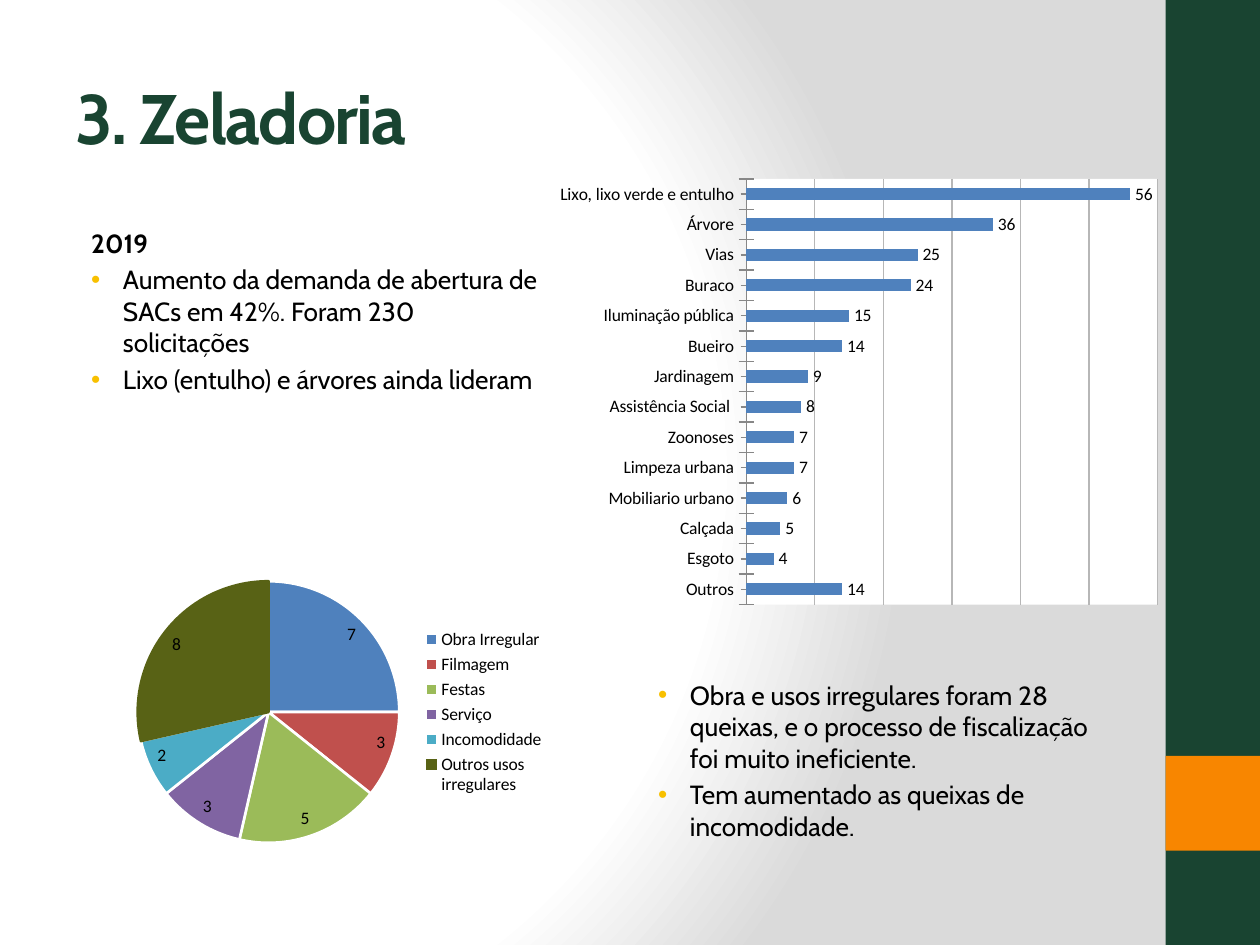
from lxml.etree import SubElement
from pptx import Presentation
from pptx.chart.data import CategoryChartData
from pptx.dml.color import RGBColor
from pptx.enum.chart import XL_CHART_TYPE, XL_LABEL_POSITION, XL_LEGEND_POSITION, XL_TICK_LABEL_POSITION, XL_TICK_MARK
from pptx.enum.shapes import MSO_SHAPE
from pptx.enum.text import MSO_ANCHOR
from pptx.oxml import parse_xml
from pptx.oxml.ns import nsdecls, qn
from pptx.util import Cm, Pt

GREEN, ORANGE, YELLOW = "194431", "F88600", "F8C000"
BLACK, WHITE, BLUE = "000000", "FFFFFF", "4F81BD"
GRID, AXIS = "B7B7B7", "878787"

BACKGROUND = [(0, WHITE), (75, WHITE), (100, "DADADA")]
BANDS = [(0, 19.05, GREEN), (15.24, 1.91, ORANGE)]
TITLE = "3. Zeladoria"
YEAR = "2019"
DEMAND = [
    "Aumento da demanda de abertura de SACs em 42%. Foram 230 solicitações",
    "Lixo (entulho) e árvores ainda lideram",
]
IRREGULAR = [
    "Obra e usos irregulares foram 28 queixas, e o processo de fiscalização foi muito ineficiente.",
    "Tem aumentado as queixas de incomodidade.",
]
REQUESTS = [
    ("Lixo, lixo verde e entulho", 56), ("Árvore", 36), ("Vias", 25), ("Buraco", 24),
    ("Iluminação pública", 15), ("Bueiro", 14), ("Jardinagem", 9),
    ("Assistência Social ", 8), ("Zoonoses", 7), ("Limpeza urbana", 7),
    ("Mobiliario urbano", 6), ("Calçada", 5), ("Esgoto", 4), ("Outros", 14),
]
USES = [
    ("Obra Irregular", 7), ("Filmagem", 3), ("Festas", 5),
    ("Serviço", 3), ("Incomodidade", 2), ("Outros usos irregulares", 8),
]
USE_COLORS = [BLUE, "C0504D", "9BBB59", "8064A2", "4BACC6", "586215"]


def color(value):
    return RGBColor.from_string(value)


def paint(target, value):
    target.fill.solid()
    target.fill.fore_color.rgb = color(value)


def draw_background(page):
    stops = "".join(
        f'<a:gs pos="{place * 1000}"><a:srgbClr val="{value}"/></a:gs>' for place, value in BACKGROUND)
    page.background.fill.solid()
    properties = page.background.fill._xPr
    properties.replace(properties.find(qn("a:solidFill")), parse_xml(
        f'<a:gradFill {nsdecls("a")} rotWithShape="1"><a:gsLst>{stops}</a:gsLst><a:path path="circle">'
        '<a:fillToRect l="20000" t="50000" r="100000" b="50000"/></a:path></a:gradFill>'))


def add_band(page, top, height, value):
    band = page.shapes.add_shape(MSO_SHAPE.RECTANGLE, Cm(23.5), Cm(top), Cm(1.9), Cm(height))
    band.shadow.inherit = False
    paint(band, value)
    band.line.fill.background()


def add_box(page, place, anchor=MSO_ANCHOR.TOP):
    frame = page.shapes.add_textbox(*map(Cm, place)).text_frame
    frame.word_wrap = True
    frame.vertical_anchor = anchor
    return frame


def add_text(frame, text, size=15, value=BLACK, bold=False, left=0, bullet=False, spacing=None):
    first = not frame.paragraphs[0].runs
    para = frame.paragraphs[0] if first else frame.add_paragraph()
    if not first:
        para.space_before = Pt(3)
    properties = para._p.get_or_add_pPr()
    properties.set("marL", str(Cm(left)))
    if bullet:
        properties.set("indent", str(-Cm(0.64)))
        bullet_color = SubElement(properties, qn("a:buClr"))
        SubElement(bullet_color, qn("a:srgbClr"), val=YELLOW)
        SubElement(properties, qn("a:buFont"), typeface="Arial")
        SubElement(properties, qn("a:buChar"), char="•")
    span = para.add_run()
    span.text = text
    span.font.name = "Cabin"
    span.font.size = Pt(size)
    span.font.bold = bold
    span.font.color.rgb = color(value)
    if spacing:
        span._r.get_or_add_rPr().set("spc", str(spacing))


def add_bullets(frame, texts):
    for text in texts:
        add_text(frame, text, left=0.96, bullet=True)


def set_layout(parent, x, y, width, height, inner=True):
    for old in parent.findall(qn("c:layout")):
        parent.remove(old)
    target = '<c:layoutTarget val="inner"/>' if inner else ""
    layout = parse_xml(
        f'<c:layout {nsdecls("c")}><c:manualLayout>{target}<c:xMode val="edge"/><c:yMode val="edge"/>'
        f'<c:x val="{x}"/><c:y val="{y}"/><c:w val="{width}"/><c:h val="{height}"/>'
        '</c:manualLayout></c:layout>')
    parent.insert(0 if inner else 1, layout)


def add_chart(page, kind, rows, place, layout, label_position):
    data = CategoryChartData()
    data.categories = [name for name, _ in rows]
    data.add_series("Series 1", [count for _, count in rows])
    chart = page.shapes.add_chart(kind, *map(Cm, place), data).chart
    chart.has_title = False
    chart.has_legend = False
    chart.font.name = "Calibri"
    chart.font.size = Pt(10)
    chart.font.color.rgb = color(BLACK)
    plot = chart.plots[0]
    plot.vary_by_categories = kind == XL_CHART_TYPE.PIE
    plot.has_data_labels = True
    plot.data_labels.show_value = True
    plot.data_labels.show_percentage = False
    plot.data_labels.position = label_position
    area = chart._chartSpace.chart.plotArea
    set_layout(area, *layout)
    area.append(parse_xml(
        f'<c:spPr {nsdecls("c", "a")}><a:solidFill><a:srgbClr val="{WHITE}"/></a:solidFill>'
        '<a:ln><a:noFill/></a:ln></c:spPr>'))
    return chart


def add_requests_chart(page):
    chart = add_chart(page, XL_CHART_TYPE.BAR_CLUSTERED, REQUESTS, (11.02, 3.43, 12.57, 8.94),
                      (0.32, 0.02, 0.66, 0.96), XL_LABEL_POSITION.OUTSIDE_END)
    chart.plots[0].gap_width = 150
    paint(chart.plots[0].series[0].format, BLUE)
    names = chart.category_axis
    names.reverse_order = True
    names.major_tick_mark = XL_TICK_MARK.CROSS
    names.minor_tick_mark = XL_TICK_MARK.OUTSIDE
    names.tick_label_position = XL_TICK_LABEL_POSITION.LOW
    names.format.line.color.rgb = color(AXIS)
    counts = chart.value_axis
    counts.minimum_scale, counts.maximum_scale, counts.major_unit = 0, 60, 10
    counts.visible = False
    grid = counts.major_gridlines.format.line
    grid.color.rgb = color(GRID)
    grid.width = Pt(0.75)


def add_uses_chart(page):
    chart = add_chart(page, XL_CHART_TYPE.PIE, USES, (2.24, 10.67, 8.94, 7.37),
                      (0.06, 0.14, 0.59, 0.72), XL_LABEL_POSITION.INSIDE_END)
    chart.has_legend = True
    chart.legend.position = XL_LEGEND_POSITION.RIGHT
    chart.legend.include_in_layout = False
    set_layout(chart.legend._element, 0.69, 0.26, 0.3, 0.48, inner=False)
    for index, value in enumerate(USE_COLORS):
        look = chart.plots[0].series[0].points[index].format
        paint(look, value)
        look.line.color.rgb = color(value if value == USE_COLORS[-1] else WHITE)
        look.line.width = Pt(1.5)


def main():
    deck = Presentation()
    deck.slide_width, deck.slide_height = Cm(25.4), Cm(19.05)
    page = deck.slides.add_slide(deck.slide_layouts[6])
    draw_background(page)
    for band in BANDS:
        add_band(page, *band)
    title = add_box(page, (1.27, 0.76, 21.08, 3.18), MSO_ANCHOR.MIDDLE)
    add_text(title, TITLE, size=40, value=GREEN, bold=True, spacing=-100)
    demand = add_box(page, (1.27, 4.45, 9.91, 8.26))
    add_text(demand, YEAR, bold=True, left=0.32)
    add_bullets(demand, DEMAND)
    add_requests_chart(page)
    add_uses_chart(page)
    add_bullets(add_box(page, (12.7, 13.56, 9.91, 3.28)), IRREGULAR)
    deck.save("out.pptx")


if __name__ == "__main__":
    main()
